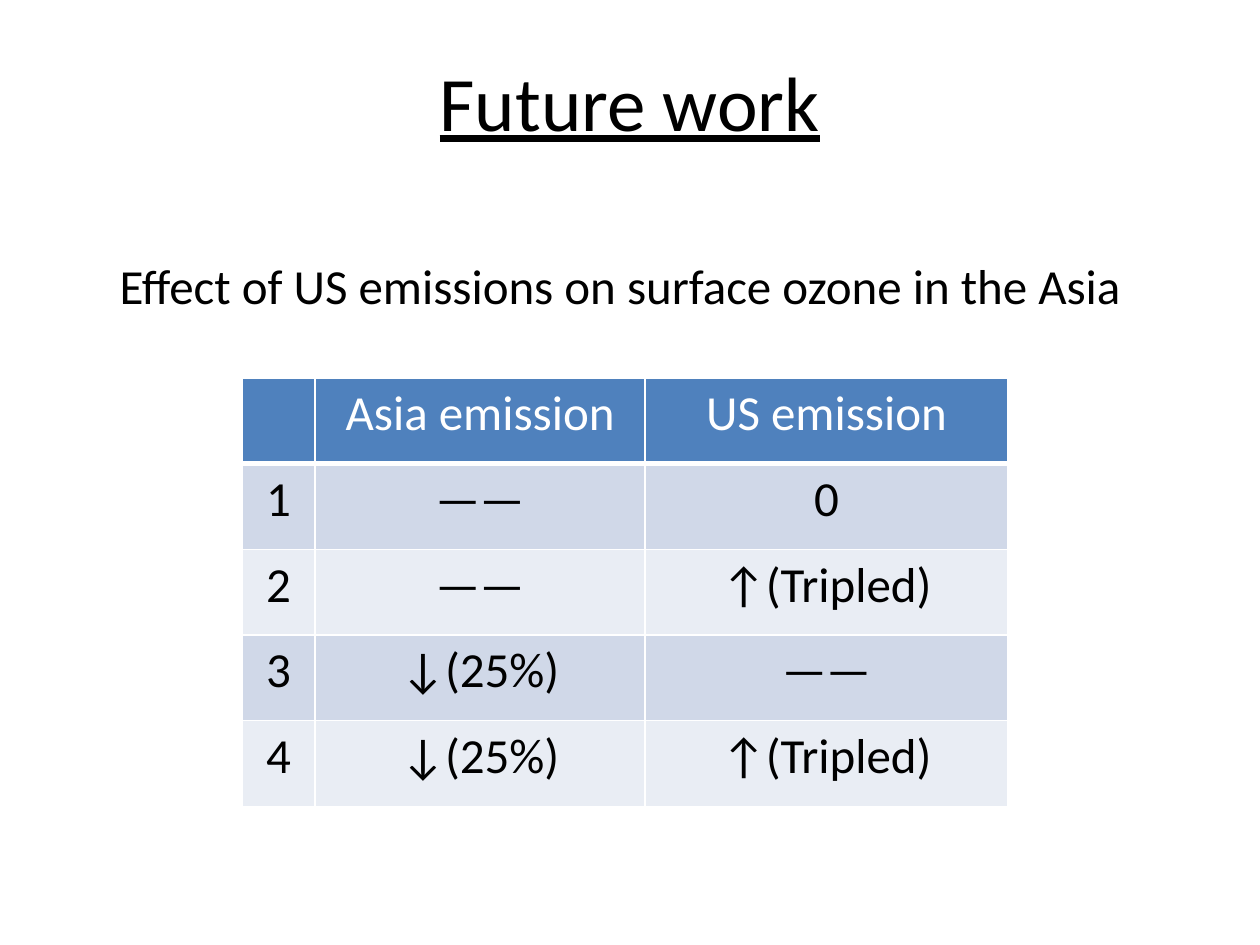
from lxml.etree import SubElement
from pptx import Presentation
from pptx.dml.color import RGBColor as Rgb
from pptx.enum.text import MSO_ANCHOR as Anchor, PP_ALIGN as Align
from pptx.oxml.ns import qn
from pptx.util import Inches, Pt

COLORS = {
    "ink": "000000",
    "paper": "FFFFFF",
    "header": "4F81BD",
    "odd": "D0D8E8",
    "even": "E9EDF4",
}
SAME, CUT, TRIPLED = "——", "↓(25%)", "↑(Tripled)"
ROWS = [
    ["", "Asia emission", "US emission"],
    ["1", SAME, "0"],
    ["2", SAME, TRIPLED],
    ["3", CUT, SAME],
    ["4", CUT, TRIPLED],
]


class SlideBuilder:
    """Holds the text style and the current slide."""

    font = {"name": "Calibri", "size": Pt(28)}

    def __init__(self, slide):
        self.slide = slide

    def add_span(self, frame, text, color="ink", align=Align.LEFT, **formats):
        para = frame.paragraphs[0]
        para.alignment = align
        span = para.add_run()
        span.text = text
        for name, value in {**self.font, **formats}.items():
            setattr(span.font, name, value)
        span.font.color.rgb = Rgb.from_string(COLORS[color])

    def text(self, place, text, frame_formats, **formats):
        box = self.slide.shapes.add_textbox(*map(Inches, place))
        for name, value in {"word_wrap": True, **frame_formats}.items():
            setattr(box.text_frame, name, value)
        self.add_span(box.text_frame, text, **formats)

    def border(self, cell, header):
        properties = cell._tc.get_or_add_tcPr()
        for index, side in enumerate(("lnL", "lnR", "lnT", "lnB")):
            width = Pt(3 if header and side == "lnB" else 1)
            line = properties.makeelement(qn(f"a:{side}"), {"w": str(width)})
            fill = SubElement(line, qn("a:solidFill"))
            SubElement(fill, qn("a:srgbClr"), val=COLORS["paper"])
            properties.insert(index, line)  # borders come before the fill

    def table(self, left, top, widths, row_height, rows):
        place = (left, top, sum(widths), row_height * len(rows))
        table = self.slide.shapes.add_table(
            len(rows), len(widths), *map(Inches, place)).table
        for column, width in zip(table.columns, widths):
            column.width = Inches(width)
        for r, values in enumerate(rows):
            table.rows[r].height = Inches(row_height)
            header = r == 0
            fill = "header" if header else ("even", "odd")[r % 2]
            for c, value in enumerate(values):
                cell = table.cell(r, c)
                cell.fill.solid()
                cell.fill.fore_color.rgb = Rgb.from_string(COLORS[fill])
                self.border(cell, header)
                if value:
                    self.add_span(cell.text_frame, value, align=Align.CENTER,
                                  color="paper" if header else "ink",
                                  bold=False)


def main():
    deck = Presentation()
    deck.slide_width, deck.slide_height = Inches(10), Inches(7.5)
    page = SlideBuilder(deck.slides.add_slide(deck.slide_layouts[6]))

    # Title
    page.text((0.5, 0.17, 9, 1.25), "Future work",
              {"vertical_anchor": Anchor.MIDDLE},
              align=Align.CENTER, size=Pt(44), underline=True)

    # Lead sentence, set in and down by the box margins
    page.text((0.5, 1.42, 9, 5.28),
              "Effect of US emissions on surface ozone in the Asia",
              {"margin_left": Inches(0.45), "margin_top": Inches(0.61)})

    # Emission scenarios
    page.table(1.92, 3, [0.58, 2.62, 2.88], 0.68, ROWS)

    deck.save("out.pptx")


if __name__ == "__main__":
    main()
